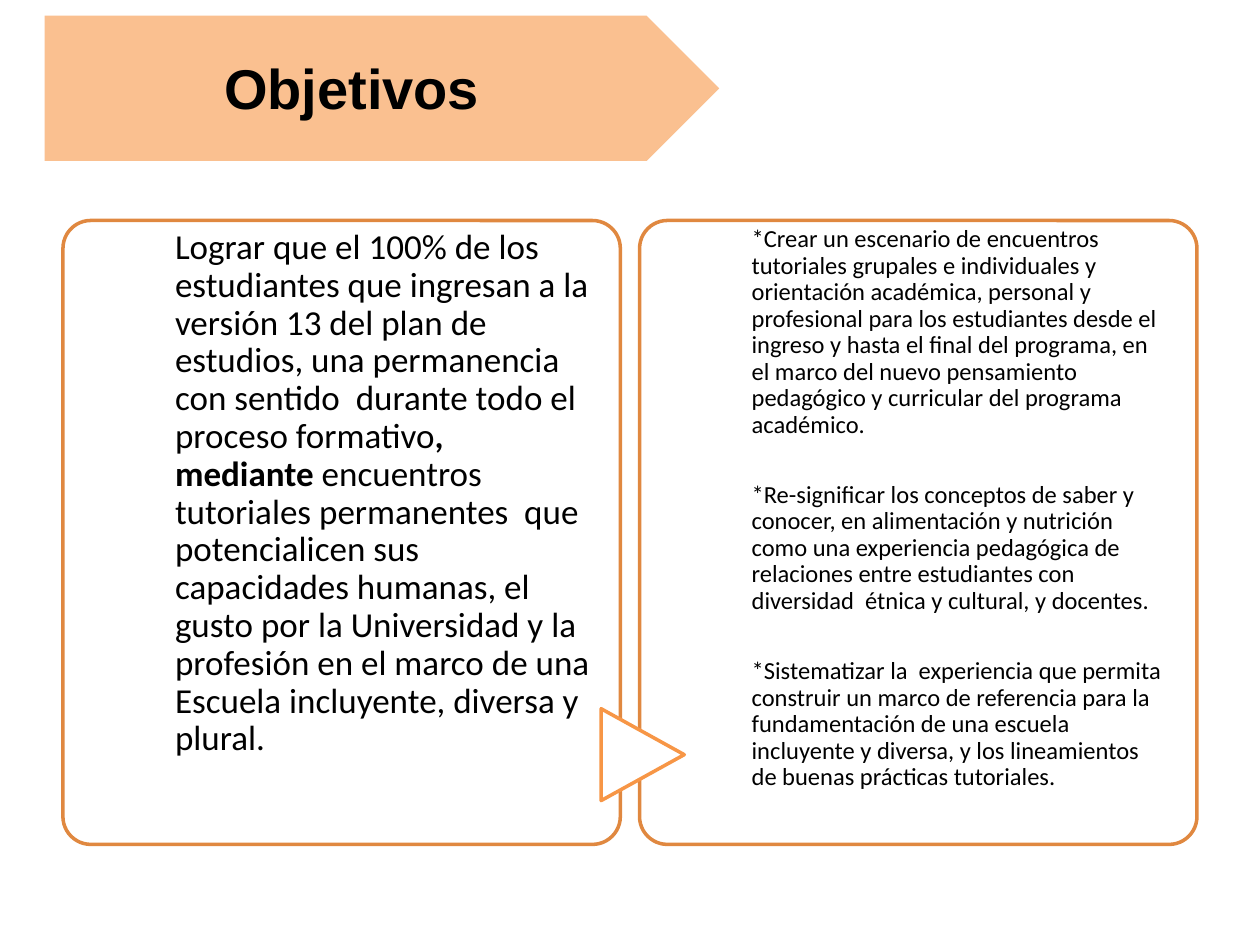
from pptx import Presentation
from pptx.util import Pt
from pptx.dml.color import RGBColor
from pptx.enum.shapes import MSO_SHAPE as SHAPE
from pptx.enum.text import MSO_ANCHOR as ANCHOR, PP_ALIGN as ALIGN

COLORS = {"banner": "FAC090", "border": "E08840", "arrow": "F79646",
          "white": "FFFFFF", "text": "000000"}

prs = Presentation()
prs.slide_width, prs.slide_height = Pt(720), Pt(540)
s = prs.slides.add_slide(prs.slide_layouts[6])


def add_shape(kind, x, y, w, h, fill, line=None):
    sp = s.shapes.add_shape(kind, Pt(x), Pt(y), Pt(w), Pt(h))
    sp.shadow.inherit = False
    sp.fill.solid()
    sp.fill.fore_color.rgb = RGBColor.from_string(COLORS[fill])
    if line:
        sp.line.color.rgb = RGBColor.from_string(COLORS[line])
        sp.line.width = Pt(2)
    else:
        sp.line.fill.background()
    return sp


def add_run(p, text, font, size, bold=False):
    r = p.add_run()
    r.text = text
    r.font.name, r.font.size, r.font.bold = font, Pt(size), bold
    r.font.color.rgb = RGBColor.from_string(COLORS["text"])


# Title banner
add_shape(SHAPE.PENTAGON, 25.5, 9, 385.5, 83, "banner")
tf = s.shapes.add_textbox(Pt(25.5), Pt(27), Pt(351), Pt(67)).text_frame
tf.word_wrap = True
tf.paragraphs[0].alignment = ALIGN.CENTER
add_run(tf.paragraphs[0], "Objetivos", "Arial", 32, True)

# Each panel: left edge, text size, top inset, paragraphs of (text, bold) runs
panels = [
    (36, 20, 5, [
        [("Lograr que el 100% de los estudiantes que ingresan a la versión 13 del "
          "plan de estudios, una permanencia con sentido  durante todo el proceso "
          "formativo", False),
         (", mediante", True),
         (" encuentros tutoriales permanentes  que potencialicen sus capacidades "
          "humanas, el gusto por la Universidad y la profesión en el marco de una "
          "Escuela incluyente, diversa y plural.", False)],
    ]),
    (365.5, 14, 3.5, [
        [("*Crear un escenario de encuentros tutoriales grupales e individuales y "
          "orientación académica, personal y profesional para los estudiantes desde "
          "el ingreso y hasta el final del programa, en el marco del nuevo "
          "pensamiento pedagógico y curricular del programa académico.", False)],
        [("*Re-significar los conceptos de saber y conocer, en alimentación y "
          "nutrición como una experiencia pedagógica de relaciones entre estudiantes "
          "con diversidad  étnica y cultural, y docentes.", False)],
        [("*Sistematizar la  experiencia que permita construir un marco de "
          "referencia para la fundamentación de una escuela incluyente y diversa, y "
          "los lineamientos de buenas prácticas tutoriales.", False)],
    ]),
]

# Panel frames
for x, *_ in panels:
    sp = add_shape(SHAPE.ROUNDED_RECTANGLE, x, 126, 318.5, 356.5, "white", "border")
    sp.adjustments[0] = 0.05

# Arrow between the panels
sp = add_shape(SHAPE.FLOWCHART_EXTRACT, 341, 407.5, 52.5, 47.5, "white", "arrow")
sp.rotation = 90

# Panel text
for x, size, inset, paragraphs in panels:
    tf = s.shapes.add_textbox(Pt(x + 64), Pt(126), Pt(237), Pt(356.5)).text_frame
    tf.word_wrap = True
    tf.vertical_anchor = ANCHOR.TOP
    tf.margin_left = tf.margin_right = tf.margin_bottom = 0
    tf.margin_top = Pt(inset)
    for i, runs in enumerate(paragraphs):
        p = tf.add_paragraph() if i else tf.paragraphs[0]
        p.line_spacing = 0.9
        p.space_after = Pt(25)
        for text, bold in runs:
            add_run(p, text, "Calibri", size, bold)

prs.save("out.pptx")
